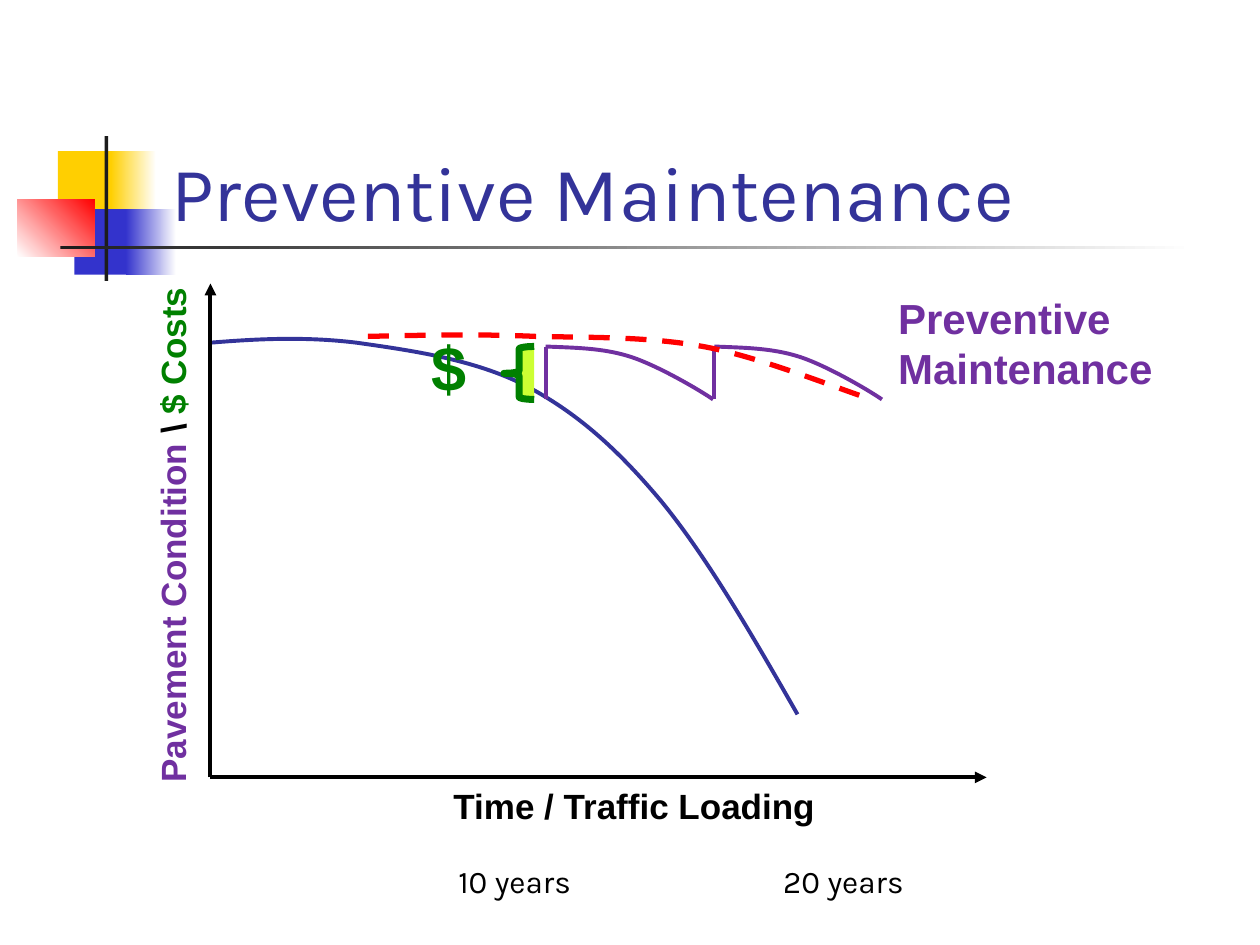
"""Build the Preventive Maintenance slide: pavement condition over time."""
from pptx import Presentation
from pptx.dml.color import RGBColor
from pptx.enum import dml, shapes, text
from pptx.oxml.ns import qn
from pptx.util import Inches, Pt
from lxml import etree

WHITE = RGBColor(0xFF, 0xFF, 0xFF)
BLACK = RGBColor(0, 0, 0)
CHARCOAL = RGBColor(0x1C, 0x1C, 0x1C)
YELLOW = RGBColor(0xFF, 0xCF, 0x01)
BLUE = RGBColor(0x33, 0x33, 0xCC)
NAVY = RGBColor(0x33, 0x33, 0x99)
RED = RGBColor(0xFF, 0, 0)
PURPLE = RGBColor(0x70, 0x30, 0xA0)
GREEN = RGBColor(0, 0x80, 0)
LIME = RGBColor(0xCC, 0xFF, 0x33)
LEFT, CENTER, RIGHT = text.PP_ALIGN.LEFT, text.PP_ALIGN.CENTER, text.PP_ALIGN.RIGHT

prs = Presentation()
prs.slide_width, prs.slide_height = Inches(10), Inches(7.5)
slide = prs.slides.add_slide(prs.slide_layouts[6])


def add_curve(points, color, width):
    """Draw an open chain of cubic Bezier segments."""
    start, *rest = [(Inches(x), Inches(y)) for x, y in points]
    builder = slide.shapes.build_freeform(*start)
    builder.add_line_segments(rest, close=False)
    curve = builder.convert_to_shape()
    outline = next(curve._element.iter(qn("a:path")))
    corners = outline.findall(qn("a:lnTo"))
    for i in range(0, len(corners), 3):
        segment = etree.SubElement(outline, qn("a:cubicBezTo"))
        for corner in corners[i:i + 3]:
            segment.append(corner[0])
            outline.remove(corner)
    curve.shadow.inherit = False
    curve.fill.background()
    curve.line.color.rgb = color
    curve.line.width = Pt(width)
    return curve


def add_label(box, lines, size, font="Arial", bold=True, align=LEFT, wrap=False):
    """Add a text box whose lines are lists of (wording, colour) runs."""
    label = slide.shapes.add_textbox(*map(Inches, box))
    frame = label.text_frame
    frame.word_wrap = wrap
    for i, line in enumerate(lines):
        paragraph = frame.add_paragraph() if i else frame.paragraphs[0]
        paragraph.alignment = align
        for wording, color in line:
            run = paragraph.add_run()
            run.text = wording
            run.font.name, run.font.size, run.font.bold = font, Pt(size), bold
            run.font.color.rgb = color
    return label


ornaments = [
    ((0.46, 1.2, 0.48, 0.52), YELLOW, None, 0),
    ((0.88, 1.2, 0.36, 0.52), YELLOW, WHITE, 0),
    ((0.59, 1.66, 0.46, 0.52), BLUE, None, 0),
    ((1, 1.66, 0.4, 0.52), BLUE, WHITE, 0),
    ((0.14, 1.58, 0.61, 0.46), WHITE, RED, 45),
    ((0.83, 1.08, 0.03, 1.15), CHARCOAL, None, 0),
    ((0.48, 1.95, 9, 0.03), CHARCOAL, WHITE, 0),
]
for box, start, end, angle in ornaments:
    ornament = slide.shapes.add_shape(shapes.MSO_SHAPE.RECTANGLE, *map(Inches, box))
    ornament.shadow.inherit = False
    ornament.line.fill.background()
    if end is None:
        ornament.fill.solid()
        ornament.fill.fore_color.rgb = start
    else:
        ornament.fill.gradient()
        ornament.fill.gradient_angle = angle
        for stop, color in zip(ornament.fill.gradient_stops, (start, end)):
            stop.color.rgb = color

add_curve([(1.67, 2.72), (2.04, 2.69), (2.42, 2.67), (2.83, 2.72), (3.25, 2.78),
           (3.76, 2.85), (4.17, 3.06), (4.57, 3.27), (4.89, 3.55), (5.25, 3.98),
           (5.61, 4.42), (5.97, 5.04), (6.33, 5.67)], NAVY, 2.25)

straight_lines = [
    ((1.67, 6.17, 1.67, 2.25), BLACK, True),
    ((1.67, 6.17, 7.83, 6.17), BLACK, True),
    ((4.33, 3.17, 4.33, 2.75), PURPLE, False),
    ((5.67, 3.17, 5.67, 2.75), PURPLE, False),
]
for ends, color, arrow in straight_lines:
    line = slide.shapes.add_connector(shapes.MSO_CONNECTOR.STRAIGHT, *map(Inches, ends))
    line.line.color.rgb = color
    line.line.width = Pt(2.25)
    properties = line._element.spPr
    if arrow:
        etree.SubElement(properties.find(qn("a:ln")), qn("a:tailEnd"), type="triangle")
    etree.SubElement(properties, qn("a:effectLst"))

for x in (4.33, 5.67):
    add_curve([(x, 2.75), (x + 0.22, 2.76), (x + 0.45, 2.76), (x + 0.67, 2.83),
               (x + 0.89, 2.9), (x + 1.23, 3.1), (x + 1.33, 3.17)], PURPLE, 2.25)

trend = add_curve([(2.92, 2.67), (3.36, 2.66), (3.81, 2.65), (4.25, 2.67), (4.69, 2.68),
                   (5.14, 2.67), (5.58, 2.75), (6.03, 2.83), (6.69, 3.1), (6.92, 3.17)],
                  RED, 3)
trend.line.dash_style = dml.MSO_LINE.DASH

brace = slide.shapes.add_shape(shapes.MSO_SHAPE.LEFT_BRACE, Inches(4), Inches(2.75),
                               Inches(0.24), Inches(0.42))
brace.adjustments[0], brace.adjustments[1] = 0.083, 0.507
brace.shadow.inherit = False
brace.fill.solid()
brace.fill.fore_color.rgb = LIME
brace.line.color.rgb = GREEN
brace.line.width = Pt(4)

title = add_label((1.26, 0.68, 8.52, 1.25), [[("Preventive Maintenance", NAVY)]], 44,
                  font="Karla", bold=False, wrap=True)
title.text_frame.vertical_anchor = text.MSO_ANCHOR.BOTTOM
add_label((7.03, 2.27, 2.24, 0.91),
          [[("Preventive", PURPLE)], [("Maintenance", PURPLE)]], 24)
condition_axis = add_label((-0.75, 3.97, 4.24, 0.44),
                           [[("Pavement Condition ", PURPLE), ("\\ ", BLACK),
                             ("$ Costs", GREEN)]], 20)
condition_axis.rotation = 270
add_label((3.32, 2.56, 0.48, 0.71), [[("$", GREEN)]], 36, align=RIGHT)
add_label((3.5, 6.18, 3.2, 0.44), [[("Time / Traffic Loading", BLACK)]], 20)
for left, years in ((6.03, "20 years"), (3.42, "10 years")):
    add_label((left, 6.79, 1.33, 0.4), [[(years, BLACK)]], 18, font="Karla",
              bold=False, align=CENTER, wrap=True)

prs.save("out.pptx")
